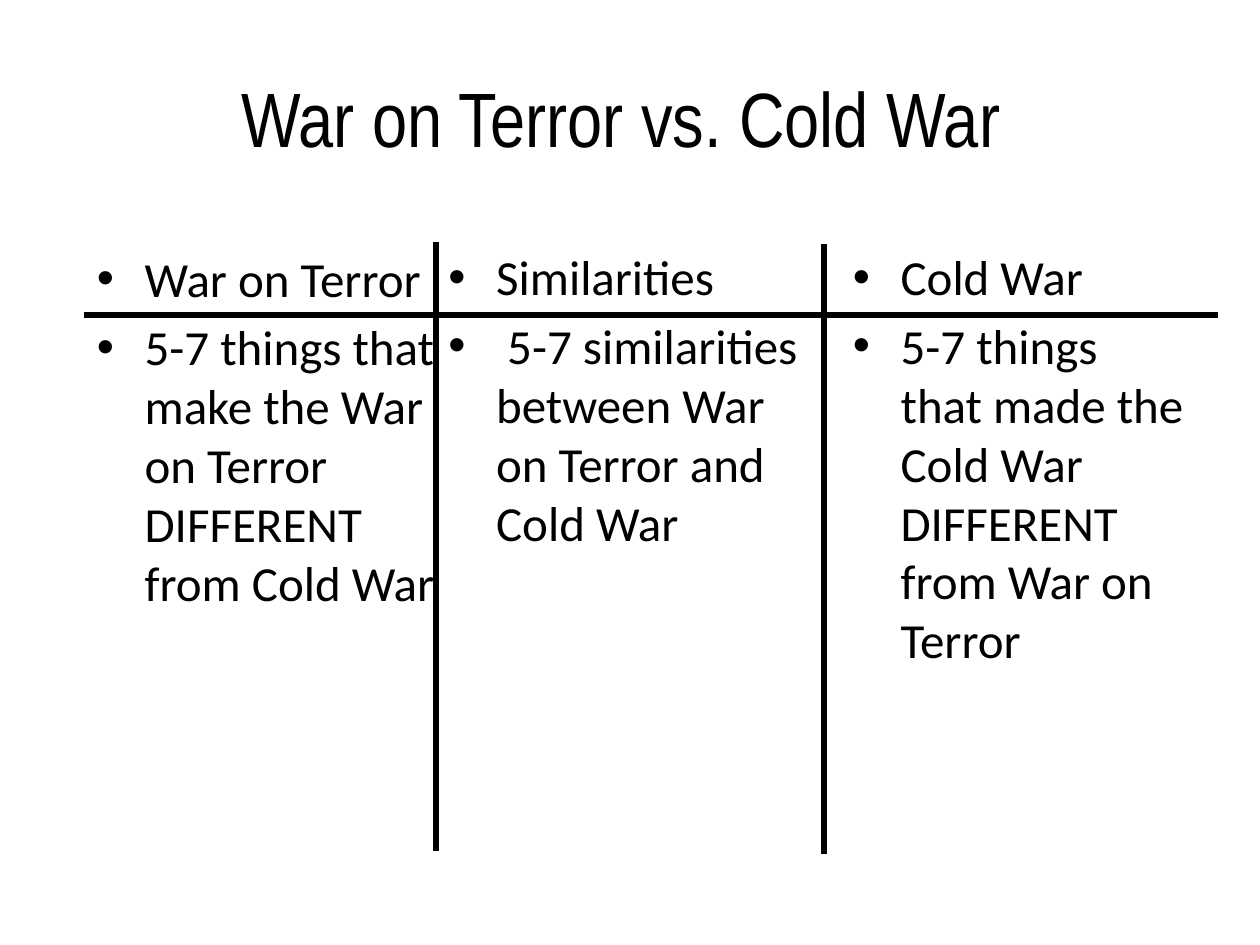
"""Build a three-column comparison slide of the War on Terror and the Cold War."""
from lxml import etree
from pptx import Presentation
from pptx.dml.color import RGBColor
from pptx.enum.shapes import MSO_CONNECTOR
from pptx.enum.text import MSO_ANCHOR, PP_ALIGN
from pptx.oxml.ns import qn
from pptx.util import Inches, Pt

STRAIGHT = MSO_CONNECTOR.STRAIGHT
MIDDLE, TOP = MSO_ANCHOR.MIDDLE, MSO_ANCHOR.TOP
CENTER, LEFT = PP_ALIGN.CENTER, PP_ALIGN.LEFT
BLACK = RGBColor(0x00, 0x00, 0x00)
WHITE = RGBColor(0xFF, 0xFF, 0xFF)

TITLE = "War on Terror vs. Cold War "
COLUMNS = [
    ((3.46, 1.91, 3.08, 4.95),
     ["Similarities", " 5-7 similarities between War on Terror and Cold War"]),
    ((6.67, 1.91, 2.83, 4.95),
     ["Cold War", "5-7 things that made the Cold War DIFFERENT from War on Terror"]),
    ((0.67, 1.92, 3.08, 4.95),
     ["War on Terror", "5-7 things that make the War on Terror DIFFERENT from Cold War"]),
]
RULES = [
    (3.46, 1.92, 3.46, 6.75),
    (6.54, 1.94, 6.54, 6.78),
    (0.67, 2.5, 9.67, 2.5),
]
INDENT = Inches(0.38)


def add_text(slide, box, lines, font, size, align=LEFT, anchor=TOP):
    frame = slide.shapes.add_textbox(*map(Inches, box)).text_frame
    frame.word_wrap = True
    frame.vertical_anchor = anchor
    for index, line in enumerate(lines):
        paragraph = frame.paragraphs[0] if index == 0 else frame.add_paragraph()
        paragraph.alignment = align
        run = paragraph.add_run()
        run.text = line
        run.font.name = font
        run.font.size = Pt(size)
        run.font.color.rgb = BLACK
    return frame


def add_bullet(paragraph):
    paragraph.space_before = Pt(5.6)
    properties = paragraph._p.get_or_add_pPr()
    properties.set("marL", str(INDENT))
    properties.set("indent", str(-INDENT))
    etree.SubElement(properties, qn("a:buFont")).set("typeface", "Arial")
    etree.SubElement(properties, qn("a:buChar")).set("char", "•")


def add_rule(slide, ends):
    rule = slide.shapes.add_connector(STRAIGHT, *map(Inches, ends))
    rule.line.color.rgb = BLACK
    rule.line.width = Pt(3)
    etree.SubElement(rule._element.spPr, qn("a:effectLst"))


def main():
    deck = Presentation()
    deck.slide_width, deck.slide_height = Inches(10), Inches(7.5)
    slide = deck.slides.add_slide(deck.slide_layouts[6])
    slide.background.fill.solid()
    slide.background.fill.fore_color.rgb = WHITE

    add_text(slide, (0.5, 0.3, 9, 1.25), [TITLE], "Arial Narrow", 44, CENTER, MIDDLE)
    for box, points in COLUMNS:
        for paragraph in add_text(slide, box, points, "Calibri", 28).paragraphs:
            add_bullet(paragraph)
    for ends in RULES:
        add_rule(slide, ends)

    deck.save("out.pptx")


if __name__ == "__main__":
    main()
